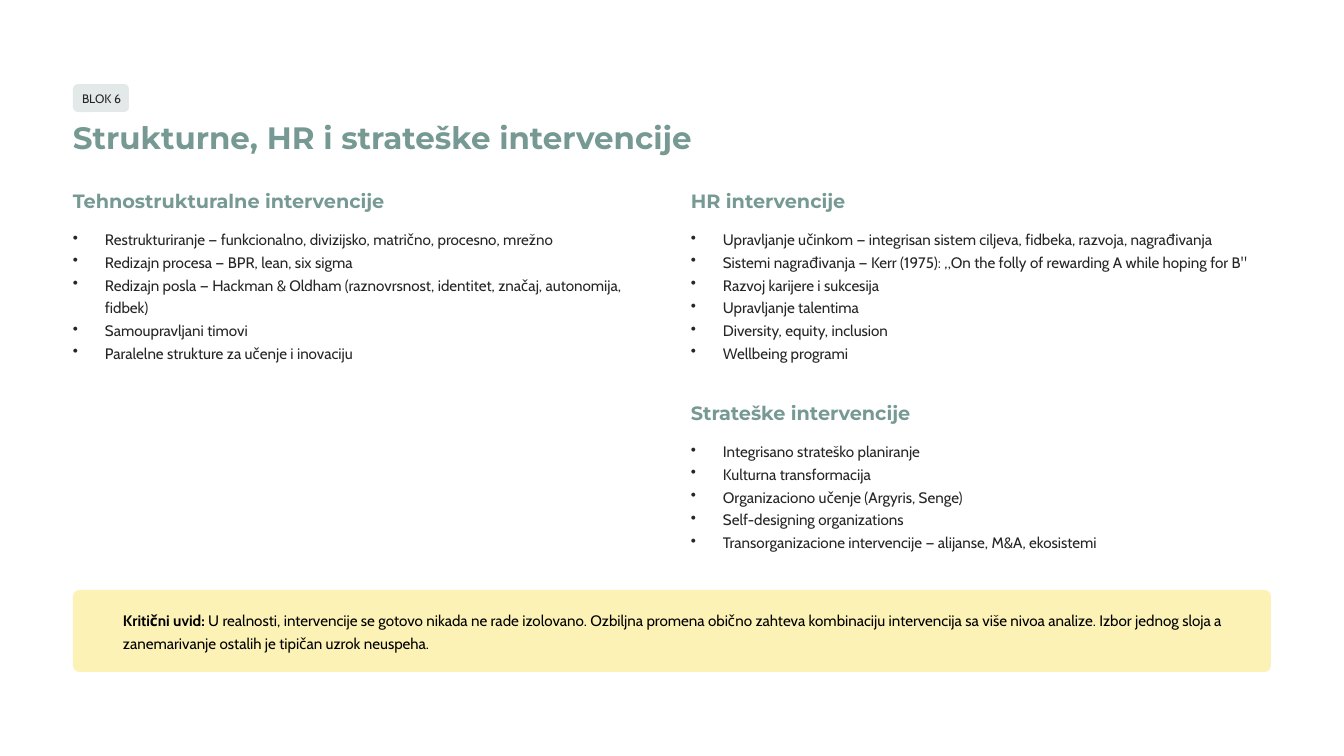
from lxml import etree
from pptx import Presentation, util as u
from pptx.dml.color import RGBColor
from pptx.enum import shapes, text
from pptx.oxml.ns import qn

BADGE = "BLOK 6"
TITLE = "Strukturne, HR i strateške intervencije"
# (left, top, heading, bullets)
SECTIONS = [
    (73, 188, "Tehnostrukturalne intervencije", [
        "Restrukturiranje — funkcionalno, divizijsko, matrično, procesno, mrežno",
        "Redizajn procesa — BPR, lean, six sigma",
        "Redizajn posla — Hackman & Oldham (raznovrsnost, identitet, značaj, autonomija, fidbek)",
        "Samoupravljani timovi",
        "Paralelne strukture za učenje i inovaciju",
    ]),
    (691, 188, "HR intervencije", [
        "Upravljanje učinkom — integrisan sistem ciljeva, fidbeka, razvoja, nagrađivanja",
        "Sistemi nagrađivanja — Kerr (1975): „On the folly of rewarding A while hoping for B\"",
        "Razvoj karijere i sukcesija",
        "Upravljanje talentima",
        "Diversity, equity, inclusion",
        "Wellbeing programi",
    ]),
    (691, 400, "Strateške intervencije", [
        "Integrisano strateško planiranje",
        "Kulturna transformacija",
        "Organizaciono učenje (Argyris, Senge)",
        "Self-designing organizations",
        "Transorganizacione intervencije — alijanse, M&A, ekosistemi",
    ]),
]
INSIGHT_LABEL = "Kritični uvid:"
INSIGHT = (" U realnosti, intervencije se gotovo nikada ne rade izolovano. Ozbiljna promena obično "
           "zahteva kombinaciju intervencija sa više nivoa analize. Izbor jednog sloja a "
           "zanemarivanje ostalih je tipičan uzrok neuspeha.")

COLORS = {"page": "FFFFFF", "badge": "E2E9E8", "insight": "FCF2B5",
          "accent": "769993", "body": "272525", "black": "000000"}
# font name, size, bold, colour, line spacing
STYLES = {
    "badge": ("Cabin", 10.5, False, "body", 15.5),
    "title": ("Montserrat", 26.5, True, "accent", 33),
    "heading": ("Montserrat", 16.5, True, "accent", 20.5),
    "bullet": ("Cabin", 13, False, "body", 19.5),
    "insight": ("Cabin", 13, False, "black", 19.5),
}
PX = u.Inches(1) / 84
HEADING_H, LIST_DROP, LIST_W, LINE_H = 24, 38, 580, 23
INDENT = 32


def px(*lengths):
    return [round(length * PX) for length in lengths]


def rgb(name):
    return RGBColor.from_string(COLORS[name])


def add_panel(slide, box, color, radius):
    panel = slide.shapes.add_shape(shapes.MSO_SHAPE.ROUNDED_RECTANGLE, *px(*box))
    panel.adjustments[0] = radius / min(box[2:])
    panel.shadow.inherit = False
    panel.fill.solid()
    panel.fill.fore_color.rgb = rgb(color)
    panel.line.fill.background()


def add_bullet(paragraph):
    props = paragraph._p.get_or_add_pPr()
    indent, = px(INDENT)
    props.set("marL", str(indent))
    props.set("indent", str(-indent))
    etree.SubElement(props, qn("a:buChar")).set("char", "•")


def add_text(slide, box, style, lines, wrap=False, bullets=False):
    """Each line is a list of (words, bold) runs; bold None keeps the style's own."""
    name, size, bold, color, spacing = STYLES[style]
    frame = slide.shapes.add_textbox(*px(*box)).text_frame
    format_values = {"word_wrap": wrap, "auto_size": text.MSO_AUTO_SIZE.NONE,
                     "vertical_anchor": text.MSO_ANCHOR.TOP, "margin_left": 0,
                     "margin_top": 0, "margin_right": 0, "margin_bottom": 0}
    for key, value in format_values.items():
        setattr(frame, key, value)
    for i, runs in enumerate(lines):
        paragraph = frame.add_paragraph() if i else frame.paragraphs[0]
        if bullets:
            add_bullet(paragraph)
        paragraph.line_spacing = u.Pt(spacing)
        for words, run_bold in runs:
            run = paragraph.add_run()
            run.text = words
            font_values = {"name": name, "size": u.Pt(size),
                           "bold": bold if run_bold is None else run_bold}
            for key, value in font_values.items():
                setattr(run.font, key, value)
            run.font.color.rgb = rgb(color)


def main():
    deck = Presentation()
    deck.slide_width, deck.slide_height = u.Inches(16), u.Inches(9)
    slide = deck.slides.add_slide(deck.slide_layouts[6])
    slide.background.fill.solid()
    slide.background.fill.fore_color.rgb = rgb("page")

    add_panel(slide, (73, 84, 56, 28), "badge", 5)
    add_text(slide, (82, 88, 37, 18), "badge", [[(BADGE, None)]])
    add_text(slide, (73, 117, 620, 39), "title", [[(TITLE, None)]])

    for left, top, heading, bullets in SECTIONS:
        add_text(slide, (left, top, LIST_W, HEADING_H), "heading", [[(heading, None)]])
        add_text(slide, (left, top + LIST_DROP, LIST_W, LINE_H * len(bullets)), "bullet",
                 [[(bullet, None)] for bullet in bullets], wrap=True, bullets=True)

    add_panel(slide, (73, 590, 1198, 82), "insight", 6.5)
    add_text(slide, (123, 607, 1132, 46), "insight",
             [[(INSIGHT_LABEL, True), (INSIGHT, False)]], wrap=True)
    deck.save("out.pptx")


if __name__ == "__main__":
    main()
